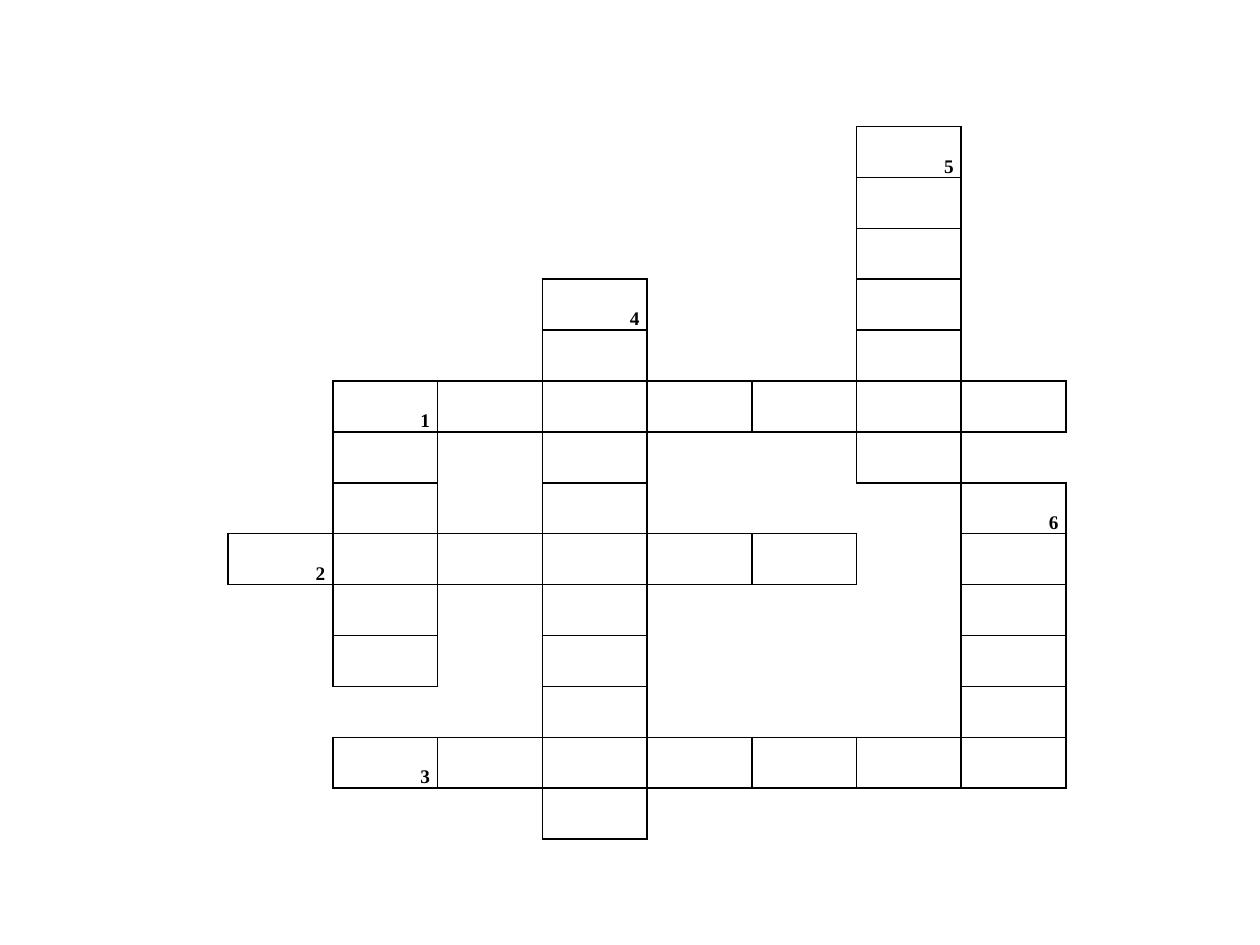
from lxml import etree
from pptx import Presentation
from pptx.dml.color import RGBColor
from pptx.enum.text import MSO_ANCHOR, PP_ALIGN
from pptx.oxml.ns import qn
from pptx.util import Inches, Pt

RIGHT = PP_ALIGN.RIGHT
BOTTOM = MSO_ANCHOR.BOTTOM
COLORS = {"ink": "000000"}
FONT = "Times New Roman"
ROWS, COLS = 15, 9
LEFT, TOP, WIDTH, HEIGHT = 0.98, 0.6, 7.48, 6.06

ACROSS, DOWN = (0, 1), (1, 0)
# Number, first row, first column, direction, letters
WORDS = [
    (1, 6, 2, ACROSS, 7),
    (1, 6, 2, DOWN, 6),
    (2, 9, 1, ACROSS, 6),
    (3, 13, 2, ACROSS, 7),
    (4, 4, 4, DOWN, 11),
    (5, 1, 7, DOWN, 7),
    (6, 8, 8, DOWN, 6),
]
# Border tag and the neighbour that shares it, in schema order
SIDES = [("a:lnL", 0, -1), ("a:lnR", 0, 1), ("a:lnT", -1, 0), ("a:lnB", 1, 0)]


def letter_squares():
    """Return every (row, column) that holds a letter."""
    return {
        (row + step * down, col + step * right)
        for _, row, col, (down, right), length in WORDS
        for step in range(length)
    }


def draw_border(cell, tag, visible):
    properties = cell._tc.get_or_add_tcPr()
    line = etree.SubElement(properties, qn(tag), w=str(Pt(1)))
    if visible:
        fill = etree.SubElement(line, qn("a:solidFill"))
        etree.SubElement(fill, qn("a:srgbClr"), val=COLORS["ink"])
    else:
        etree.SubElement(line, qn("a:noFill"))


def style_cell(cell, row, col, squares):
    for tag, down, right in SIDES:
        neighbour = (row + down, col + right)
        draw_border(cell, tag, (row, col) in squares or neighbour in squares)
    cell.fill.background()
    cell.margin_left = cell.margin_right = Inches(0.06)
    cell.margin_top = cell.margin_bottom = 0


def write_number(cell, number):
    cell.vertical_anchor = BOTTOM
    para = cell.text_frame.paragraphs[0]
    para.text = str(number)
    para.alignment = RIGHT
    para.line_spacing = 1.15
    para.font.name = FONT
    para.font.size = Pt(11)
    para.font.bold = True
    para.font.color.rgb = RGBColor.from_string(COLORS["ink"])


def add_crossword(page):
    frame = page.shapes.add_table(
        ROWS, COLS, Inches(LEFT), Inches(TOP), Inches(WIDTH), Inches(HEIGHT))
    table = frame.table
    table.first_row = table.horz_banding = False
    squares = letter_squares()
    for row in range(ROWS):
        for col in range(COLS):
            style_cell(table.cell(row, col), row, col, squares)
    # Words that start in the same square share one number
    numbers = {(row, col): number for number, row, col, *_ in WORDS}
    for (row, col), number in numbers.items():
        write_number(table.cell(row, col), number)


def main():
    deck = Presentation()
    deck.slide_width, deck.slide_height = Inches(10), Inches(7.5)
    page = deck.slides.add_slide(deck.slide_layouts[6])
    add_crossword(page)
    deck.save("out.pptx")


if __name__ == "__main__":
    main()
